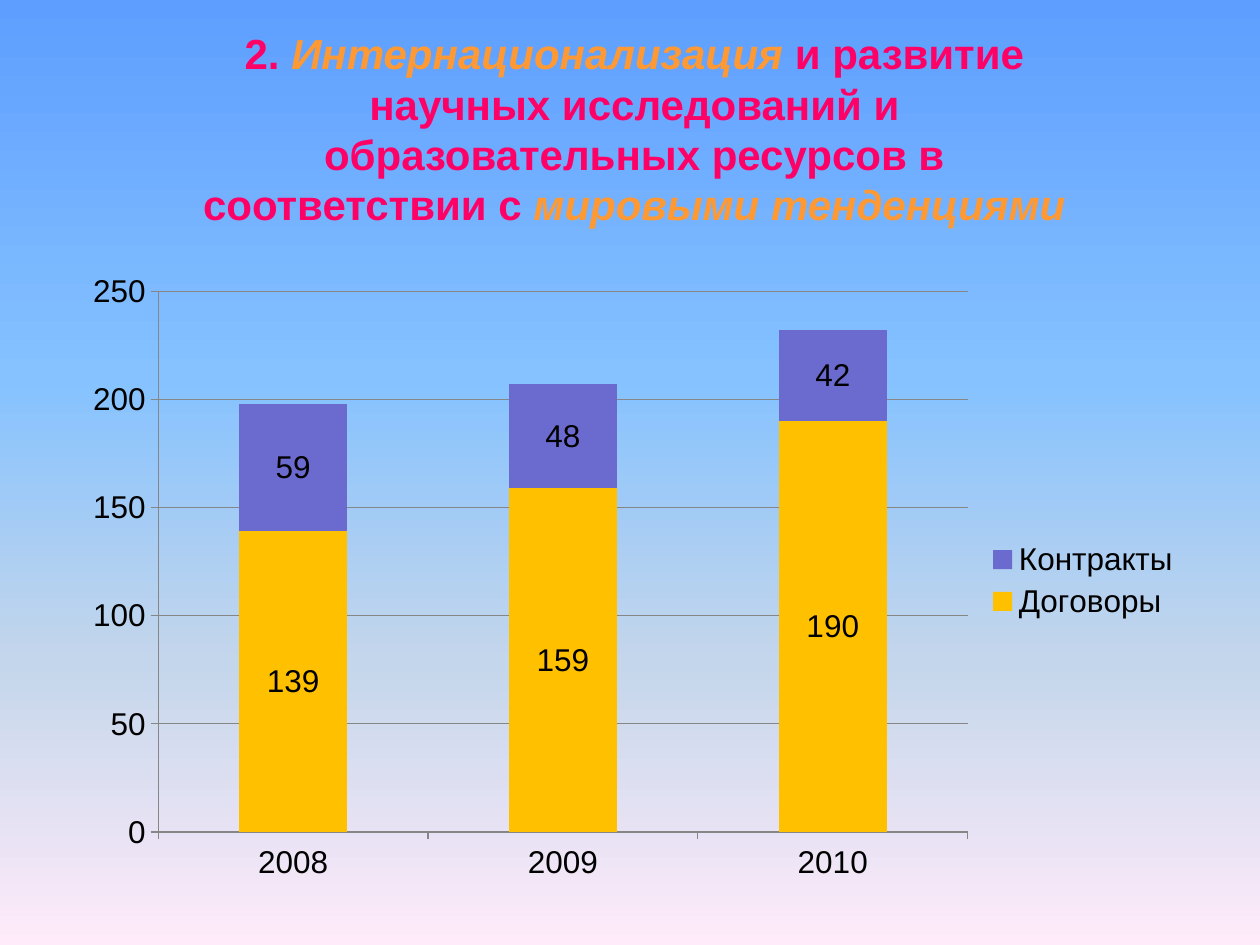
from lxml import etree
from pptx import Presentation
from pptx.chart.data import CategoryChartData
from pptx.dml.color import RGBColor
from pptx.enum.chart import XL_CHART_TYPE as ChartType, XL_LABEL_POSITION as LabelPosition
from pptx.enum.chart import XL_LEGEND_POSITION as LegendPosition, XL_TICK_MARK as TickMark
from pptx.enum.text import MSO_ANCHOR, PP_ALIGN
from pptx.oxml import parse_xml
from pptx.oxml.ns import nsdecls, qn
from pptx.util import Pt

COLORS = {
    "title": "FF0066",
    "accent": "FF9933",
    "text": "000000",
    "line": "868686",
    "Договоры": "FFC000",
    "Контракты": "6B6BCF",
}
BACKGROUND_STOPS = [(0, "5E9EFF"), (40, "85C2FF"), (70, "C4D6EB"), (100, "FFEBFA")]


def color(name):
    return RGBColor.from_string(COLORS[name])


presentation = Presentation()
presentation.slide_width = Pt(720)
presentation.slide_height = Pt(540)
slide = presentation.slides.add_slide(presentation.slide_layouts[6])

fill = slide.background.fill
fill.gradient()
fill.gradient_angle = 270
stop_list = fill.gradient_stops[0]._gs.getparent()
for stop in list(stop_list):
    stop_list.remove(stop)
for position, hex_color in BACKGROUND_STOPS:
    stop = etree.SubElement(stop_list, qn("a:gs"), pos=str(position * 1000))
    etree.SubElement(stop, qn("a:srgbClr"), val=hex_color)

title = slide.shapes.add_textbox(Pt(106.5), Pt(11.5), Pt(512), Pt(124))
text_frame = title.text_frame
text_frame.word_wrap = True
text_frame.vertical_anchor = MSO_ANCHOR.MIDDLE
paragraph = text_frame.paragraphs[0]
paragraph.alignment = PP_ALIGN.CENTER
for text, color_name in [
    ("2. ", "title"),
    ("Интернационализация ", "accent"),
    ("и развитие научных исследований и образовательных ресурсов в соответствии с ", "title"),
    ("мировыми тенденциями", "accent"),
]:
    run = paragraph.add_run()
    run.text = text
    run.font.name = "Arial"
    run.font.size = Pt(24)
    run.font.bold = True
    run.font.italic = color_name == "accent"
    run.font.color.rgb = color(color_name)

chart_data = CategoryChartData()
chart_data.categories = ["2008", "2009", "2010"]
chart_data.add_series("Договоры", [139, 159, 190])
chart_data.add_series("Контракты", [59, 48, 42])
chart = slide.shapes.add_chart(
    ChartType.COLUMN_STACKED, Pt(34), Pt(146), Pt(648), Pt(371.5), chart_data
).chart
chart.has_title = False
chart.font.name = "Arial"
chart.font.size = Pt(18)
chart.font.color.rgb = color("text")
chart.has_legend = True
chart.legend.position = LegendPosition.RIGHT
chart.legend.include_in_layout = False

plot = chart.plots[0]
plot.gap_width = 150
plot.overlap = 100
plot.vary_by_categories = False
for series in plot.series:
    series.format.fill.solid()
    series.format.fill.fore_color.rgb = color(series.name)
    labels = series.data_labels
    labels.show_value = True
    labels.position = LabelPosition.CENTER

value_axis = chart.value_axis
value_axis.minimum_scale = 0
value_axis.maximum_scale = 250
value_axis.major_unit = 50
value_axis.has_major_gridlines = True
for axis in (chart.category_axis, value_axis):
    axis.major_tick_mark = TickMark.OUTSIDE
    axis.minor_tick_mark = TickMark.NONE
for part in (chart.category_axis, value_axis, value_axis.major_gridlines):
    part.format.line.color.rgb = color("line")
    part.format.line.width = Pt(0.75)

plot_area = chart._chartSpace.chart.plotArea
for layout in plot_area.findall(qn("c:layout")):
    plot_area.remove(layout)
plot_area.insert(0, parse_xml(
    f'<c:layout {nsdecls("c")}><c:manualLayout><c:layoutTarget val="inner"/>'
    '<c:xMode val="edge"/><c:yMode val="edge"/><c:x val="0.087"/><c:y val="0.055"/>'
    '<c:w val="0.714"/><c:h val="0.832"/></c:manualLayout></c:layout>'
))

presentation.save("out.pptx")
